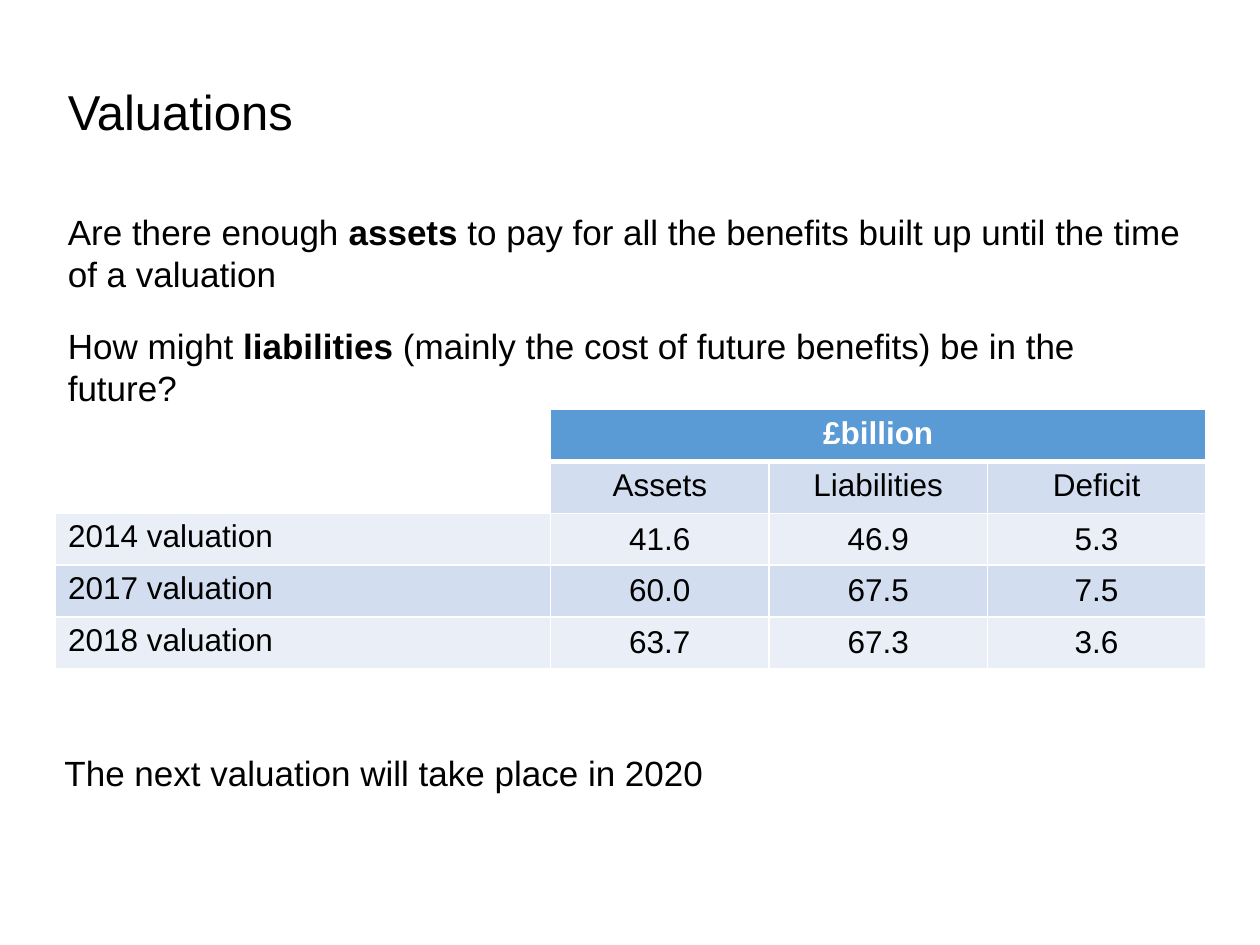
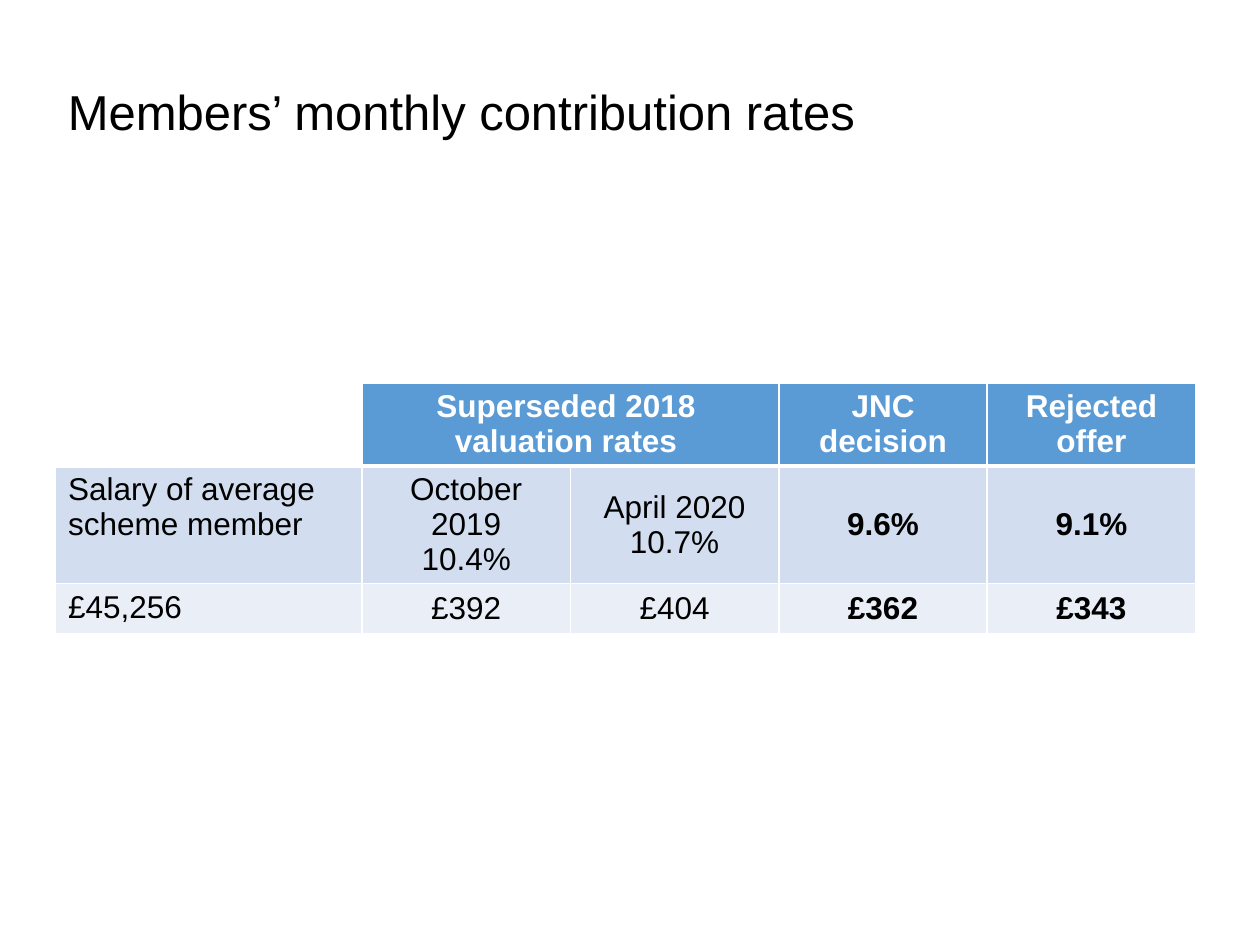
from lxml.etree import SubElement
from pptx import Presentation
from pptx.dml.color import RGBColor
from pptx.enum.text import MSO_ANCHOR, PP_ALIGN
from pptx.oxml.ns import qn
from pptx.util import Pt

FONT = "Arial"
BLACK = RGBColor(0x00, 0x00, 0x00)
WHITE = RGBColor(0xFF, 0xFF, 0xFF)
HEADER_BLUE = RGBColor(0x5B, 0x9B, 0xD5)
BAND_DARK = RGBColor(0xD2, 0xDE, 0xEF)
BAND_LIGHT = RGBColor(0xEA, 0xEF, 0xF7)

LEFT = 31.7
TITLE_SIZE, BODY_SIZE, TABLE_SIZE = 28, 20, 18
BODY_SPACING, TABLE_SPACING = 24, 20


def add_run(paragraph, text, size, color=BLACK, bold=False):
    run = paragraph.add_run()
    run.text = text
    run.font.name = FONT
    run.font.size = Pt(size)
    run.font.bold = bold
    run.font.color.rgb = color


def add_text(slide, box, runs, size, line_spacing=None, top_inset=3.6):
    """Place one paragraph; runs is a list of (text, bold)."""
    shape = slide.shapes.add_textbox(*(Pt(length) for length in box))
    frame = shape.text_frame
    frame.word_wrap = True
    frame.margin_top = Pt(top_inset)
    paragraph = frame.paragraphs[0]
    if line_spacing:
        paragraph.line_spacing = Pt(line_spacing)
    for text, bold in runs:
        add_run(paragraph, text, size, bold=bold)


def add_title(slide, text):
    add_text(slide, (LEFT, 39.6, 476, 65.5), [(text, False)], TITLE_SIZE, top_inset=7)


def set_borders(cell, row_index):
    """White 1 pt borders, 3 pt under the header row."""
    widths = {"a:lnL": 1, "a:lnR": 1,
              "a:lnT": 3 if row_index == 1 else 1,
              "a:lnB": 3 if row_index == 0 else 1}
    properties = cell._tc.get_or_add_tcPr()
    for tag, width in widths.items():
        line = SubElement(properties, qn(tag), w=str(Pt(width)))
        fill = SubElement(line, qn("a:solidFill"))
        SubElement(fill, qn("a:srgbClr"), val=str(WHITE))


def fill_cell(cell, text, row_index, bold):
    """Colour the cell by its band and write one paragraph per line."""
    if not text:
        cell.fill.background()
        return
    is_header = row_index == 0
    cell.fill.solid()
    cell.fill.fore_color.rgb = (HEADER_BLUE if is_header
                                else BAND_DARK if row_index % 2 else BAND_LIGHT)
    frame = cell.text_frame
    for index, line in enumerate(text.split("\n")):
        paragraph = frame.add_paragraph() if index else frame.paragraphs[0]
        paragraph.line_spacing = Pt(TABLE_SPACING)
        add_run(paragraph, line, TABLE_SIZE, WHITE if is_header else BLACK, bold)


def add_banded_table(slide, box, label_width, row_heights, rows, header_span,
                     middle_from_row, bold_columns=()):
    """Label column plus equal value columns; the header spans from column 1."""
    left, top, width = box
    column_count = len(rows[0])
    table = slide.shapes.add_table(len(rows), column_count, Pt(left), Pt(top),
                                   Pt(width), Pt(sum(row_heights))).table
    value_width = (width - label_width) / (column_count - 1)
    for index, column in enumerate(table.columns):
        column.width = Pt(value_width if index else label_width)
    for row, height in zip(table.rows, row_heights):
        row.height = Pt(height)

    for row_index, texts in enumerate(rows):
        for column_index, text in enumerate(texts):
            cell = table.cell(row_index, column_index)
            set_borders(cell, row_index)
            fill_cell(cell, text, row_index, row_index == 0 or column_index in bold_columns)
            if column_index:
                for paragraph in cell.text_frame.paragraphs:
                    paragraph.alignment = PP_ALIGN.CENTER
                if row_index >= middle_from_row:
                    cell.vertical_anchor = MSO_ANCHOR.MIDDLE
    table.cell(0, 1).merge(table.cell(0, header_span))


def build_valuations(slide):
    add_title(slide, "Valuations")
    # Valuation figures
    add_banded_table(
        slide, (LEFT, 234, 657.4), 283, [29.66] * 5,
        [["", "£billion", "", ""],
         ["", "Assets", "Liabilities", "Deficit"],
         ["2014 valuation", "41.6", "46.9", "5.3"],
         ["2017 valuation", "60.0", "67.5", "7.5"],
         ["2018 valuation", "63.7", "67.3", "3.6"]],
        header_span=3, middle_from_row=2)
    # Questions and outlook
    statements = [
        ((LEFT, 116.6, 657.4, 55.4),
         [("Are there enough ", False), ("assets", True),
          (" to pay for all the benefits built up until the time of a valuation", False)]),
        ((LEFT, 182, 657.4, 31.7),
         [("How might ", False), ("liabilities", True),
          (" (mainly the cost of future benefits) be in the future?", False)]),
        ((29.7, 425.7, 658.8, 31.7),
         [("The next valuation will take place in 2020", False)]),
    ]
    for box, runs in statements:
        add_text(slide, box, runs, BODY_SIZE, BODY_SPACING)


def build_contribution_rates(slide):
    add_title(slide, "Members’ monthly contribution rates")
    # Monthly contributions
    add_banded_table(
        slide, (LEFT, 219, 651.6), 175.2, [47.2, 67.2, 28.8],
        [["", "Superseded 2018 \nvaluation rates ", "", "JNC decision", "Rejected offer"],
         ["Salary of average scheme member", "October 2019\n10.4%", "April 2020\n10.7%",
          "9.6%", "9.1%"],
         ["£45,256", "£392", "£404", "£362", "£343"]],
        header_span=2, middle_from_row=1, bold_columns=(3, 4))


def main():
    presentation = Presentation()
    presentation.slide_width, presentation.slide_height = Pt(720), Pt(540)
    blank_layout = presentation.slide_layouts[6]
    for build in (build_valuations, build_contribution_rates):
        build(presentation.slides.add_slide(blank_layout))
    presentation.save("out.pptx")


if __name__ == "__main__":
    main()
